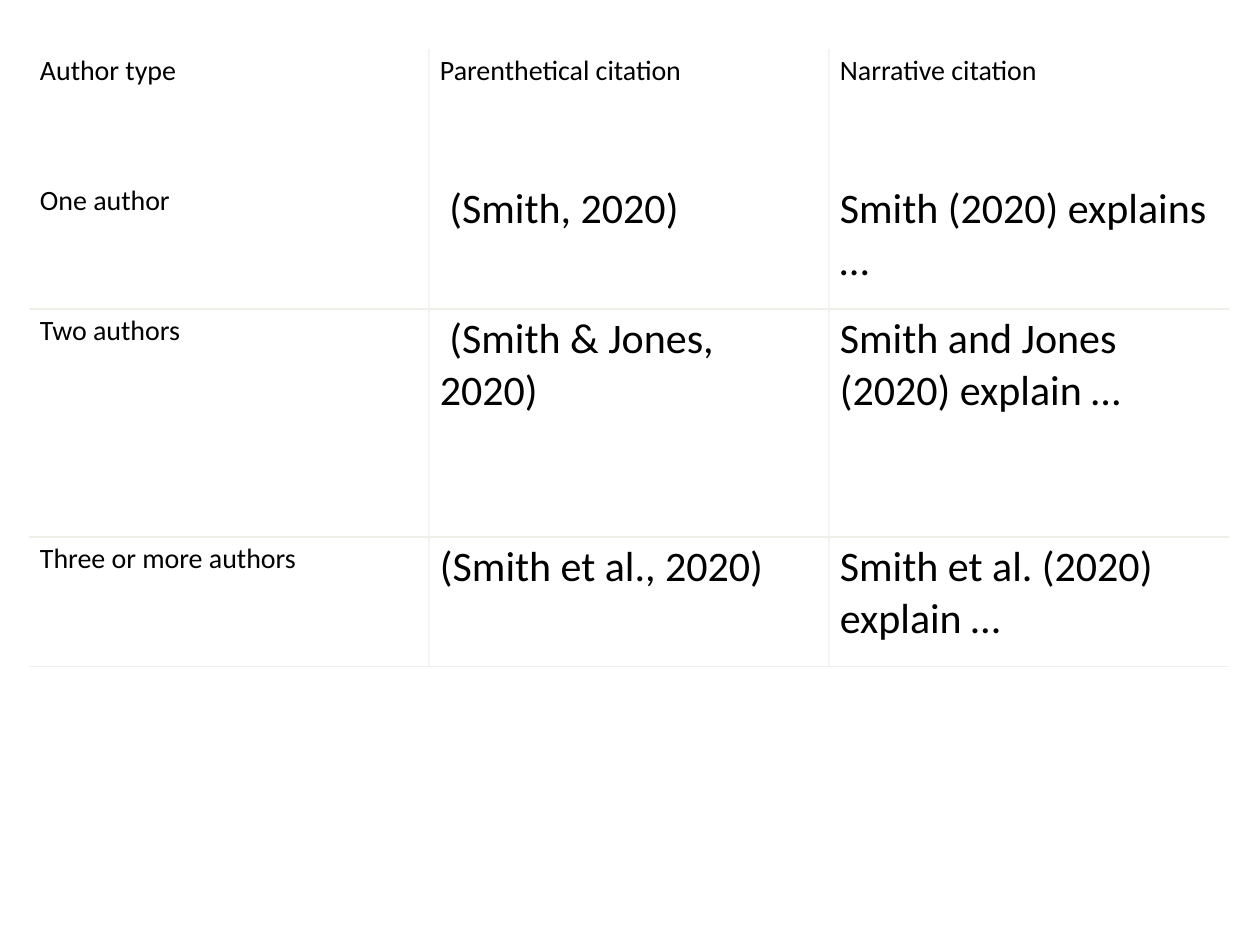
import pptx
import pptx.dml.color
import pptx.oxml
import pptx.oxml.ns
import pptx.util

CITATIONS = [
    ("Author type", "Parenthetical citation", "Narrative citation"),
    ("One author", " (Smith, 2020)", "Smith (2020) explains …"),
    ("Two authors", " (Smith & Jones, 2020)", "Smith and Jones (2020) explain …"),
    ("Three or more authors", "(Smith et al., 2020)", "Smith et al. (2020) explain …"),
]
ROW_HEIGHTS = [130, 130, 228, 130]
COLUMN_WIDTH = 400
TABLE_LEFT, TABLE_TOP = 29, 49

BLACK = pptx.dml.color.RGBColor(0x00, 0x00, 0x00)
COLUMN_RULE = pptx.dml.color.RGBColor(0xF6, 0xF4, 0xF1)
ROW_RULE = pptx.dml.color.RGBColor(0xEF, 0xEE, 0xE9)
LABEL_SIZE, EXAMPLE_SIZE = 16, 24
NO_STYLE_NO_GRID = "{2D5ABB26-0587-4C30-8999-92F81FD0307C}"


def px(count):
    return pptx.util.Emu(round(count * 914400 / 126))


CELL_FORMAT = {
    "margin_left": px(11),
    "margin_right": px(11),
    "margin_top": px(5),
    "margin_bottom": px(5),
}


def add_border(cell, side, color):
    cell._tc.get_or_add_tcPr().append(pptx.oxml.parse_xml(
        f'<a:ln{side} {pptx.oxml.ns.nsdecls("a")} w="{pptx.util.Pt(0.75)}">'
        f'<a:solidFill><a:srgbClr val="{color}"/></a:solidFill></a:ln{side}>'
    ))


def rule_cell(cell, row, column):
    """Draw the inner column rules, and a row rule under each author type."""
    last_column = len(CITATIONS[0]) - 1
    borders = [
        ("L", COLUMN_RULE, column > 0),
        ("R", COLUMN_RULE, column < last_column),
        ("T", ROW_RULE, row > 1),
        ("B", ROW_RULE, row > 0),
    ]
    for side, color, drawn in borders:
        if drawn:
            add_border(cell, side, color)


def fill_cell(cell, wording, row, column):
    for attribute, value in CELL_FORMAT.items():
        setattr(cell, attribute, value)
    rule_cell(cell, row, column)
    cell.fill.background()
    run = cell.text_frame.paragraphs[0].add_run()
    run.text = wording
    is_label = row == 0 or column == 0
    run.font.size = pptx.util.Pt(LABEL_SIZE if is_label else EXAMPLE_SIZE)
    run.font.name = "Calibri"
    run.font.color.rgb = BLACK


def main():
    deck = pptx.Presentation()
    deck.slide_width, deck.slide_height = px(1260), px(945)
    slide = deck.slides.add_slide(deck.slide_layouts[6])

    column_count = len(CITATIONS[0])
    table = slide.shapes.add_table(
        len(CITATIONS), column_count, px(TABLE_LEFT), px(TABLE_TOP),
        px(COLUMN_WIDTH * column_count), px(sum(ROW_HEIGHTS)),
    ).table
    table.first_row = table.horz_banding = False
    table._tbl.tblPr.find(pptx.oxml.ns.qn("a:tableStyleId")).text = NO_STYLE_NO_GRID

    for table_column in table.columns:
        table_column.width = px(COLUMN_WIDTH)
    for row, (height, wordings) in enumerate(zip(ROW_HEIGHTS, CITATIONS)):
        table.rows[row].height = px(height)
        for column, wording in enumerate(wordings):
            fill_cell(table.cell(row, column), wording, row, column)

    deck.save("out.pptx")


if __name__ == "__main__":
    main()
